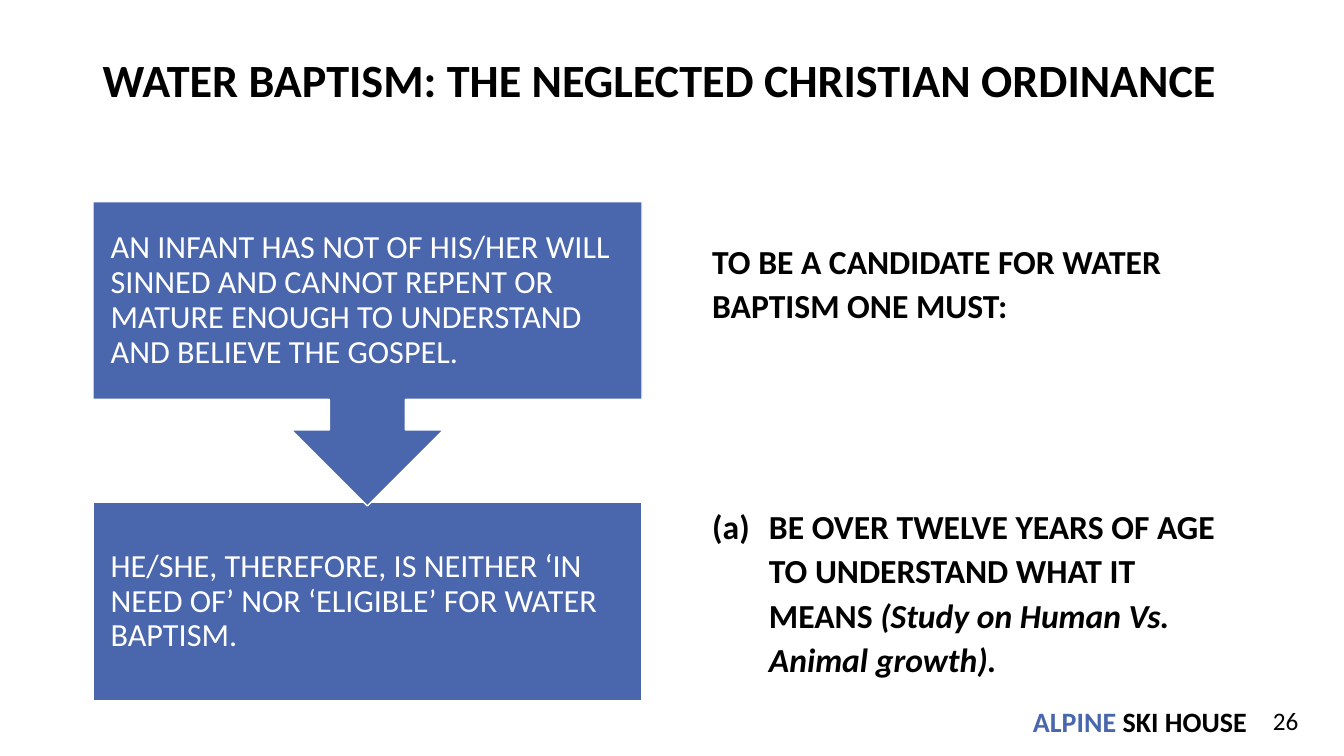
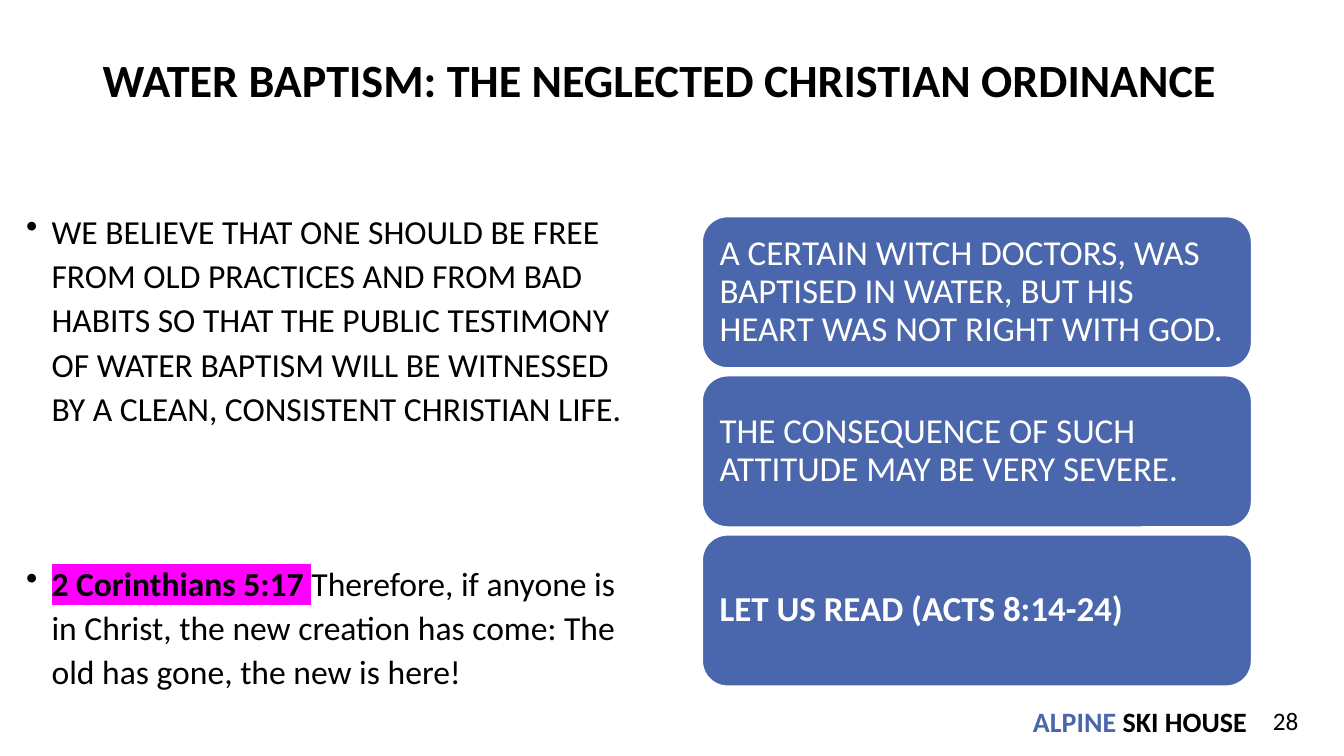
from lxml.etree import SubElement
from pptx import Presentation
from pptx.dml.color import RGBColor
from pptx.enum.shapes import MSO_SHAPE
from pptx.enum.text import MSO_ANCHOR, PP_ALIGN
from pptx.oxml.ns import qn
from pptx.util import Cm, Pt

COLORS = {"accent": "4A66AC", "text": "000000", "paper": "FFFFFF", "highlight": "FF00FF"}
FONT = "Calibri"
TITLE = "WATER BAPTISM: THE NEGLECTED CHRISTIAN ORDINANCE"
LEFT, RIGHT, COLUMN_WIDTH, TOP = 2.34, 17.7, 13.84, 5.08


def add_frame(slide, box, preset=None, insets=(0.25, 0.13), anchor=MSO_ANCHOR.TOP):
    lengths = [Cm(value) for value in box]
    if preset is None:
        shape = slide.shapes.add_textbox(*lengths)
    else:
        shape = slide.shapes.add_shape(preset, *lengths)
        shape.shadow.inherit = False
        shape.fill.solid()
        shape.fill.fore_color.rgb = RGBColor.from_string(COLORS["accent"])
        shape.line.color.rgb = RGBColor.from_string(COLORS["paper"])
        shape.line.width = Pt(1)
    frame = shape.text_frame
    frame.word_wrap = True
    frame.vertical_anchor = anchor
    frame.margin_left = frame.margin_right = Cm(insets[0])
    frame.margin_top = frame.margin_bottom = Cm(insets[1])
    return frame


def add_text(frame, runs, size, color="text", bold=False, spacing=1.0, before=0,
             bullet=None, indent=0, align=PP_ALIGN.LEFT):
    paragraph = frame.add_paragraph() if frame.text else frame.paragraphs[0]
    if bullet:
        tag, attribute, value = bullet
        properties = paragraph._p.get_or_add_pPr()
        properties.set("marL", str(Cm(indent)))
        properties.set("indent", str(-Cm(indent)))
        bullet_color = SubElement(properties, qn("a:buClr"))
        SubElement(bullet_color, qn("a:srgbClr")).set("val", COLORS["text"])
        SubElement(properties, qn(tag)).set(attribute, value)
    paragraph.alignment = align
    paragraph.line_spacing = spacing
    if before:
        paragraph.space_before = Pt(before)
    paragraph.font.name = FONT
    paragraph.font.size = Pt(size)
    paragraph.font.bold = bold
    paragraph.font.color.rgb = RGBColor.from_string(COLORS[color])
    for text in runs:
        paragraph.add_run().text = text
    return paragraph


presentation = Presentation()
presentation.slide_width = Cm(33.87)
presentation.slide_height = Cm(19.05)

slides = []
for number in ("26", "28"):
    slide = presentation.slides.add_slide(presentation.slide_layouts[6])
    slides.append(slide)

    title = add_frame(slide, (LEFT, 1.19, 29.21, 1.78), anchor=MSO_ANCHOR.MIDDLE)
    add_text(title, [TITLE], 33, bold=True, spacing=0.9)

    footer = add_frame(slide, (25.98, 17.68, 5.54, 0.97), insets=(0.05, 0.05),
                       anchor=MSO_ANCHOR.MIDDLE)
    footer.word_wrap = False
    footer_text = add_text(footer, ["ALPINE", " SKI HOUSE"], 20, bold=True)
    footer_text.runs[0].font.color.rgb = RGBColor.from_string(COLORS["accent"])

    page_number = add_frame(slide, (31.55, 17.65, 1.42, 1.02))
    add_text(page_number, [number], 18, align=PP_ALIGN.RIGHT)

infant_slide, testimony_slide = slides

requirements = add_frame(infant_slide, (RIGHT, 5.84, COLUMN_WIDTH, 11.8))
add_text(requirements, ["TO BE A CANDIDATE FOR WATER BAPTISM ONE MUST:"], 24,
         bold=True, spacing=1.1)
age_rule = add_text(
    requirements,
    ["BE OVER TWELVE YEARS OF AGE TO UNDERSTAND WHAT IT MEANS ",
     "(Study on Human Vs. Animal growth)."],
    24, bold=True, spacing=1.1, before=126,
    bullet=("a:buAutoNum", "type", "alphaLcParenBoth"), indent=1.43)
age_rule.runs[1].font.italic = True

steps = [
    (MSO_SHAPE.RECTANGLE, 12.67, 4.98,
     "HE/SHE, THEREFORE, IS NEITHER ‘IN NEED OF’ NOR ‘ELIGIBLE’ FOR WATER BAPTISM."),
    (MSO_SHAPE.DOWN_ARROW_CALLOUT, TOP, 7.67,
     "AN INFANT HAS NOT OF HIS/HER WILL SINNED AND CANNOT REPENT OR MATURE ENOUGH "
     "TO UNDERSTAND AND BELIEVE THE GOSPEL."),
]
for preset, top, height, text in steps:
    step = add_frame(infant_slide, (LEFT, top, COLUMN_WIDTH, height), preset,
                     (0.45, 0.45), MSO_ANCHOR.MIDDLE)
    add_text(step, [text], 23, "paper", spacing=0.9)

dot = ("a:buChar", "char", "•")
beliefs = add_frame(testimony_slide, (0.41, TOP, 15.77, 12.57))
add_text(beliefs,
         ["WE BELIEVE THAT ONE SHOULD BE FREE FROM OLD PRACTICES AND FROM BAD HABITS "
          "SO THAT THE PUBLIC TESTIMONY OF WATER BAPTISM WILL BE WITNESSED BY A CLEAN, "
          "CONSISTENT CHRISTIAN LIFE."],
         24, spacing=1.1, bullet=dot, indent=0.64)
verse = add_text(beliefs,
                 ["2 Corinthians 5:17 ",
                  "Therefore, if anyone is in Christ, the new creation has come: "
                  "The old has gone, the new is here!"],
                 24, spacing=1.1, before=93, bullet=dot, indent=0.64)
reference = verse.runs[0]
reference.font.bold = True
highlight = SubElement(reference._r.get_or_add_rPr(), qn("a:highlight"))
SubElement(highlight, qn("a:srgbClr")).set("val", COLORS["highlight"])

warnings = [
    ("A CERTAIN WITCH DOCTORS, WAS BAPTISED IN WATER, BUT HIS HEART WAS NOT RIGHT WITH GOD.",
     False),
    ("THE CONSEQUENCE OF SUCH ATTITUDE MAY BE VERY SEVERE.", False),
    ("LET US READ (ACTS 8:14-24)", True),
]
for index, (text, bold) in enumerate(warnings):
    card = add_frame(testimony_slide, (RIGHT, 5.46 + index * 4.01, COLUMN_WIDTH, 3.81),
                     MSO_SHAPE.ROUNDED_RECTANGLE, (0.25, 0.25), MSO_ANCHOR.MIDDLE)
    add_text(card, [text], 25, "paper", bold, spacing=0.9)

presentation.save("out.pptx")
